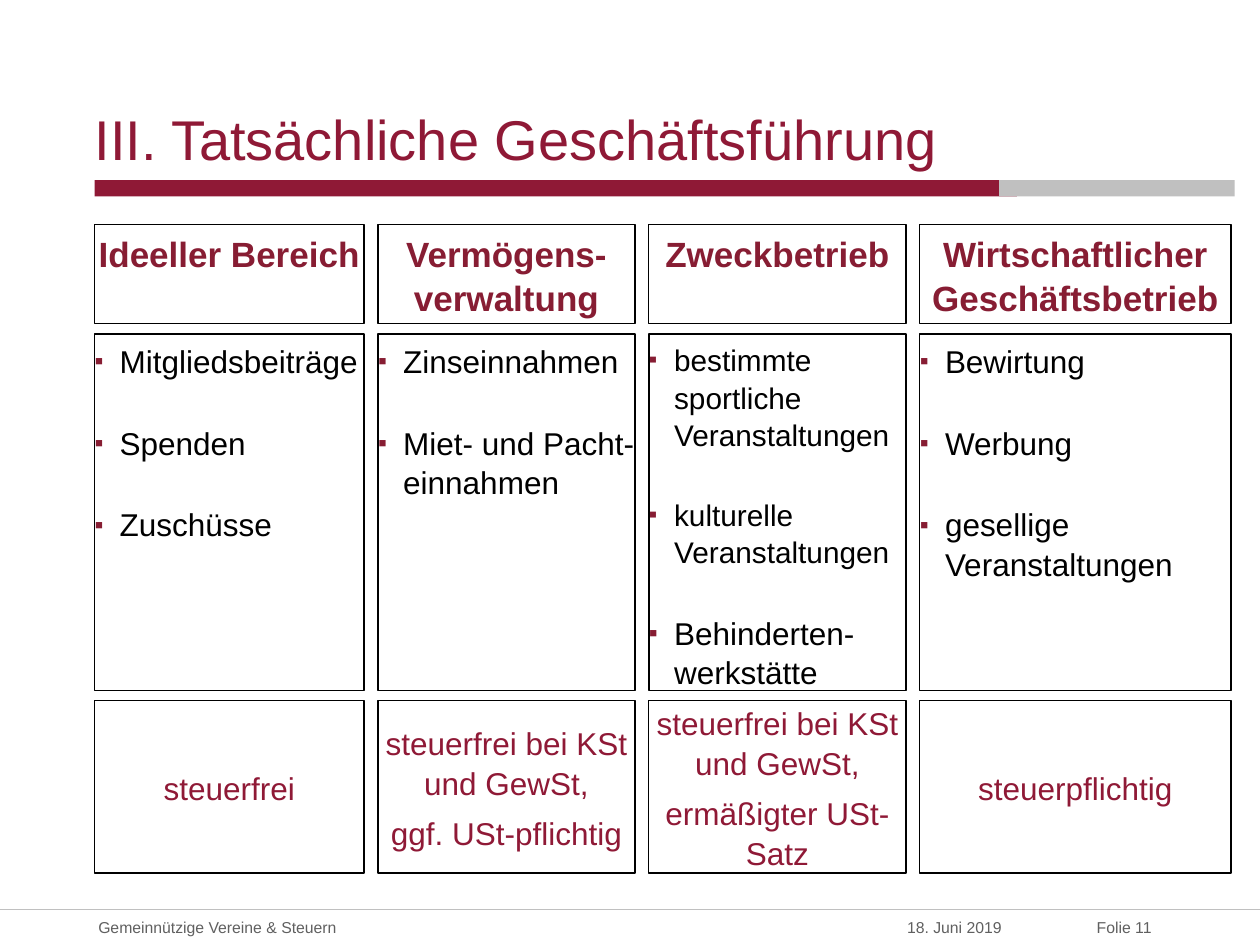
"""Build the slide on the four tax spheres of a non-profit association."""
from lxml import etree
from pptx import Presentation
from pptx.dml.color import RGBColor
from pptx.enum.shapes import MSO_CONNECTOR, MSO_SHAPE
from pptx.enum.text import MSO_ANCHOR, MSO_AUTO_SIZE, PP_ALIGN
from pptx.oxml.ns import qn
from pptx.util import Inches, Pt

RECTANGLE = MSO_SHAPE.RECTANGLE
STRAIGHT = MSO_CONNECTOR.STRAIGHT
TOP, MIDDLE, BOTTOM = MSO_ANCHOR.TOP, MSO_ANCHOR.MIDDLE, MSO_ANCHOR.BOTTOM
LEFT, CENTER, RIGHT = PP_ALIGN.LEFT, PP_ALIGN.CENTER, PP_ALIGN.RIGHT

THEME = {
    "font": "Arial",
    "title": "8F1936", "heading": "871D33", "text": "000000",
    "footer": "606060", "grey": "C0C0C0",
    "title_size": 32, "heading_size": 20, "body_size": 18,
    "dense_size": 17, "footer_size": 9,
}
BODY, DENSE = THEME["body_size"], THEME["dense_size"]

COLUMNS = [
    {"left": 0.75, "width": 2.14, "heading": "Ideeller Bereich",
     "items": ["Mitgliedsbeiträge", "Spenden", "Zuschüsse"],
     "sizes": [BODY] * 3, "status": ["steuerfrei"]},
    {"left": 3, "width": 2.04, "heading": "Vermögens-verwaltung",
     "items": ["Zinseinnahmen", "Miet- und Pacht-einnahmen"],
     "sizes": [BODY] * 2,
     "status": ["steuerfrei bei KSt und GewSt,", "ggf. USt-pflichtig"]},
    {"left": 5.15, "width": 2.04, "heading": "Zweckbetrieb",
     "items": ["bestimmte sportliche Veranstaltungen",
               "kulturelle Veranstaltungen", "Behinderten-werkstätte"],
     "sizes": [DENSE, DENSE, BODY],
     "status": ["steuerfrei bei KSt und GewSt,", "ermäßigter USt-Satz"]},
    {"left": 7.3, "width": 2.47, "heading": "Wirtschaftlicher Geschäftsbetrieb",
     "items": ["Bewirtung", "Werbung", "gesellige Veranstaltungen"],
     "sizes": [BODY] * 3, "status": ["steuerpflichtig"]},
]
ROWS = {"heading": (1.78, 0.79), "items": (2.65, 2.83), "status": (5.56, 1.37)}


def write(shape, texts, sizes, color, align=LEFT, anchor=TOP, bold=False,
          gap=0, spacing=1, inset=0, bullets=False):
    frame = shape.text_frame
    frame.word_wrap = True
    frame.auto_size = MSO_AUTO_SIZE.NONE
    frame.vertical_anchor = anchor
    frame.margin_left = frame.margin_right = 0
    frame.margin_top = frame.margin_bottom = Inches(inset)
    for index, (text, size) in enumerate(zip(texts, sizes)):
        paragraph = frame.add_paragraph() if index else frame.paragraphs[0]
        if bullets:
            properties = paragraph._p.get_or_add_pPr()
            properties.set("marL", str(Inches(0.2)))
            properties.set("indent", str(-Inches(0.2)))
            bullet_color = etree.SubElement(properties, qn("a:buClr"))
            etree.SubElement(bullet_color, qn("a:srgbClr"), val=THEME["heading"])
            etree.SubElement(properties, qn("a:buSzPct"), val="80000")
            etree.SubElement(properties, qn("a:buFont"), typeface=THEME["font"])
            etree.SubElement(properties, qn("a:buChar"), char="▪")
        paragraph.alignment = align
        paragraph.line_spacing = spacing
        paragraph.space_before = Pt(gap if index else 0)
        run = paragraph.add_run()
        run.text = text
        run.font.name = THEME["font"]
        run.font.size = Pt(size)
        run.font.bold = bold
        run.font.color.rgb = RGBColor.from_string(color)


def place(shape, left, top, width, height, fill=None, outline=None):
    shape.left, shape.top = Inches(left), Inches(top)
    shape.width, shape.height = Inches(width), Inches(height)
    if fill:
        shape.fill.solid()
        shape.fill.fore_color.rgb = RGBColor.from_string(fill)
    else:
        shape.fill.background()
    if outline:
        shape.line.color.rgb = RGBColor.from_string(outline)
        shape.line.width = Pt(0.75)
    else:
        shape.line.fill.background()
    shape.shadow.inherit = False


presentation = Presentation()
presentation.slide_width, presentation.slide_height = Inches(10), Inches(7.5)
slide = presentation.slides.add_slide(
    presentation.slide_layouts.get_by_name("Comparison"))
shapes = slide.shapes

footer_line = shapes.add_connector(
    STRAIGHT, 0, Inches(7.22), presentation.slide_width, Inches(7.22))
footer_line.line.color.rgb = RGBColor.from_string(THEME["grey"])
footer_line.line.width = Pt(0.75)
etree.SubElement(footer_line._element.spPr, qn("a:effectLst"))

for text, left, width, align in [
        ("Gemeinnützige Vereine & Steuern", 0.78, 5.51, LEFT),
        ("18. Juni 2019", 6.57, 1.38, RIGHT),
        ("Folie 11", 7.94, 1.2, RIGHT)]:
    footer = shapes.add_textbox(
        Inches(left), Inches(7.22), Inches(width), Inches(0.28))
    write(footer, [text], [THEME["footer_size"]], THEME["footer"],
          align=align, anchor=MIDDLE)

for left, width, color in [(0.75, 7.32, THEME["title"]),
                           (7.93, 1.87, THEME["grey"])]:
    bar = shapes.add_shape(RECTANGLE, 0, 0, 0, 0)
    place(bar, left, 1.43, width, 0.13, fill=color)

place(shapes.title, 0.75, 0.29, 6.85, 1.07)
write(shapes.title, ["III. Tatsächliche Geschäftsführung"],
      [THEME["title_size"]], THEME["title"], anchor=BOTTOM)

bodies = [shape for shape in slide.placeholders
          if shape.placeholder_format.idx > 0]
for column, body in zip(COLUMNS, bodies):
    heading = shapes.add_shape(RECTANGLE, 0, 0, 0, 0)
    status = shapes.add_shape(RECTANGLE, 0, 0, 0, 0)
    for row, box in [("heading", heading), ("items", body), ("status", status)]:
        top, height = ROWS[row]
        place(box, column["left"], top, column["width"], height,
              outline=THEME["text"])
    write(heading, [column["heading"]], [THEME["heading_size"]],
          THEME["heading"], align=CENTER, bold=True, spacing=1.05, inset=0.05)
    write(body, column["items"], column["sizes"], THEME["text"],
          gap=24, spacing=1.05, inset=0.05, bullets=True)
    write(status, column["status"], [BODY] * len(column["status"]),
          THEME["title"], align=CENTER, anchor=MIDDLE, gap=6, spacing=1.05,
          inset=0.05)

presentation.save("out.pptx")
